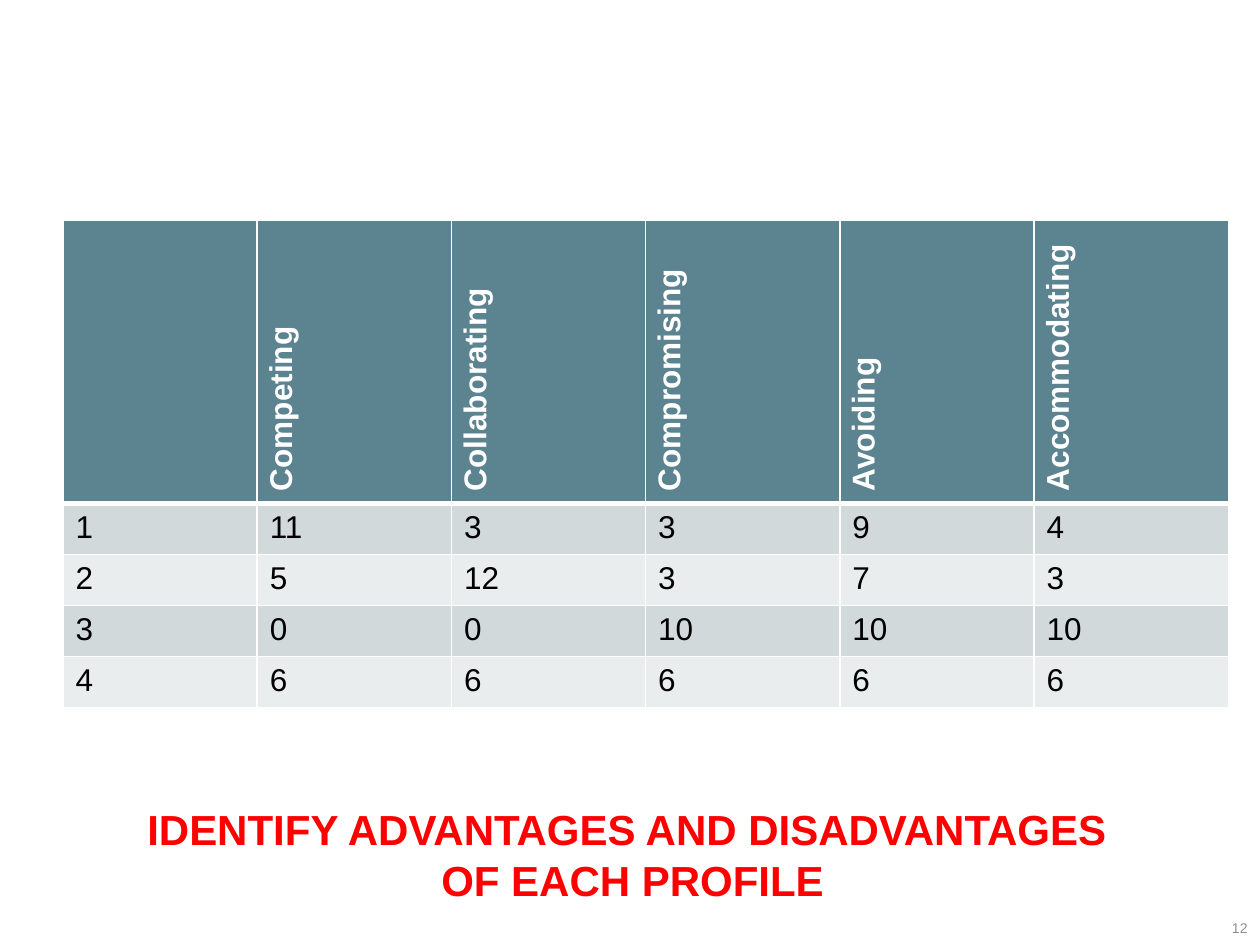
from dataclasses import dataclass

from lxml.etree import SubElement
from pptx import Presentation
from pptx.dml.color import RGBColor
from pptx.enum.text import MSO_ANCHOR as Anchor, PP_ALIGN as Align
from pptx.oxml import parse_xml
from pptx.oxml.ns import nsdecls, qn
from pptx.util import Inches, Pt

SLIDE_WIDTH, SLIDE_HEIGHT = Inches(10), Inches(7.5)
HEADER_FILL = "5C8390"
BAND_FILLS = ("D2D9DB", "EAEDEE")
STYLES = ("", "Competing", "Collaborating", "Compromising", "Avoiding", "Accommodating")
PROFILES = (
    (1, 11, 3, 3, 9, 4),
    (2, 5, 12, 3, 7, 3),
    (3, 0, 0, 10, 10, 10),
    (4, 6, 6, 6, 6, 6),
)
HEADER_HEIGHT, ROW_HEIGHT = 0.3, 0.054
HEADER_FONT = {"name": "Arial", "size": Pt(18), "bold": True}
BODY_FONT = {"name": "Arial", "size": Pt(18), "bold": False}


@dataclass
class Box:
    """A rectangle in shares of the slide's width and height."""
    left: float
    top: float
    width: float
    height: float

    def lengths(self) -> tuple:
        return (int(self.left * SLIDE_WIDTH), int(self.top * SLIDE_HEIGHT),
                int(self.width * SLIDE_WIDTH), int(self.height * SLIDE_HEIGHT))


@dataclass
class Caption:
    box: Box
    lines: tuple
    font: dict
    color: str
    align: Align
    anchor: Anchor


TABLE_BOX = Box(0.05, 0.233, 0.925, HEADER_HEIGHT + len(PROFILES) * ROW_HEIGHT)
CAPTIONS = (
    Caption(Box(0.9, 0.964, 0.1, 0.036), ("12",),
            {"name": "Arial", "size": Pt(8)}, "8A9386", Align.RIGHT, Anchor.MIDDLE),
    Caption(Box(0.031, 0.844, 0.933, 0.121),
            ("IDENTIFY ADVANTAGES AND DISADVANTAGES", " OF EACH PROFILE"),
            {"name": "Arial", "size": Pt(24), "bold": True}, "FF0000", Align.CENTER, Anchor.TOP),
)


def rgb(color: str) -> RGBColor:
    return RGBColor.from_string(color)


def format_font(font, values: dict, color: str) -> None:
    for name, value in values.items():
        setattr(font, name, value)
    font.color.rgb = rgb(color)


def set_borders(cell, bottom: float = 1, top: float = 1) -> None:
    """Draw white borders, with widths in points."""
    properties = cell._tc.get_or_add_tcPr()
    widths = {"lnL": 1, "lnR": 1, "lnT": top, "lnB": bottom}
    for index, (side, width) in enumerate(widths.items()):
        line = parse_xml(f'<a:{side} {nsdecls("a")} w="{Pt(width)}"/>')
        fill = SubElement(line, qn("a:solidFill"))
        SubElement(fill, qn("a:srgbClr"), val="FFFFFF")
        properties.insert(index, line)


def fill_cell(cell, text: str, fill: str, font: dict, color: str) -> None:
    cell.fill.solid()
    cell.fill.fore_color.rgb = rgb(fill)
    cell.text = text
    format_font(cell.text_frame.paragraphs[0].font, font, color)


def add_profile_table(slide) -> None:
    shape = slide.shapes.add_table(len(PROFILES) + 1, len(STYLES), *TABLE_BOX.lengths())
    table = shape.table
    for index, row in enumerate(table.rows):
        row.height = int((ROW_HEIGHT if index else HEADER_HEIGHT) * SLIDE_HEIGHT)
    for column, style in enumerate(STYLES):
        cell = table.cell(0, column)
        fill_cell(cell, style, HEADER_FILL, HEADER_FONT, "FFFFFF")
        set_borders(cell, bottom=3)
        if style:
            cell._tc.get_or_add_tcPr().set("vert", "vert270")
    for row, profile in enumerate(PROFILES, start=1):
        fill = BAND_FILLS[(row - 1) % 2]
        for column, score in enumerate(profile):
            cell = table.cell(row, column)
            fill_cell(cell, str(score), fill, BODY_FONT, "000000")
            set_borders(cell, top=3 if row == 1 else 1)


def add_caption(slide, caption: Caption) -> None:
    frame = slide.shapes.add_textbox(*caption.box.lengths()).text_frame
    frame.word_wrap = True
    frame.vertical_anchor = caption.anchor
    frame.text = "\n".join(caption.lines)
    for paragraph in frame.paragraphs:
        paragraph.alignment = caption.align
        format_font(paragraph.font, caption.font, caption.color)


def main() -> None:
    presentation = Presentation()
    presentation.slide_width, presentation.slide_height = SLIDE_WIDTH, SLIDE_HEIGHT
    slide = presentation.slides.add_slide(presentation.slide_layouts[6])
    add_profile_table(slide)
    for caption in CAPTIONS:
        add_caption(slide, caption)
    presentation.save("out.pptx")


if __name__ == "__main__":
    main()
